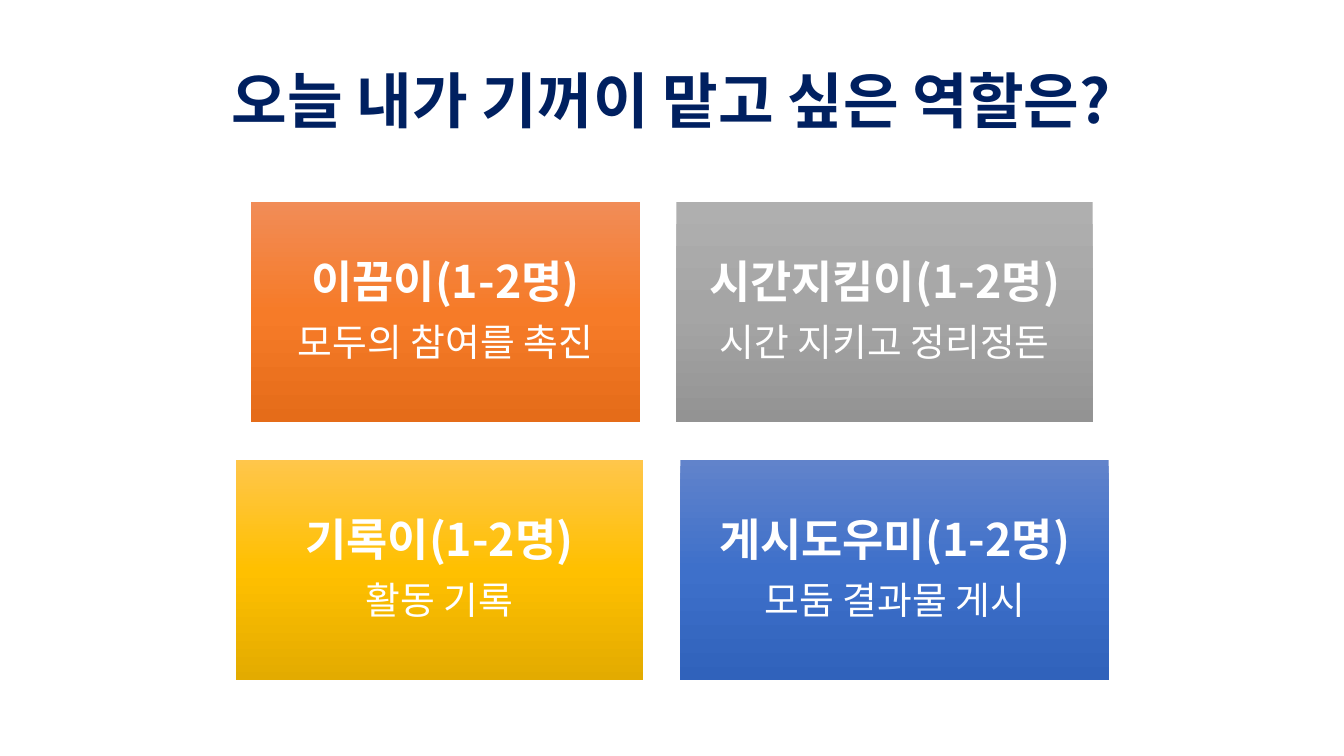
"""Build a slide that offers four group roles as gradient cards."""
from copy import deepcopy

from lxml import etree
from pptx import Presentation
from pptx.dml.color import RGBColor
from pptx.enum.shapes import MSO_SHAPE
from pptx.enum.text import MSO_ANCHOR, PP_ALIGN
from pptx.oxml.ns import qn
from pptx.util import Pt

RECTANGLE = MSO_SHAPE.RECTANGLE
MIDDLE = MSO_ANCHOR.MIDDLE
CENTER = PP_ALIGN.CENTER

FONT = "Noto Sans CJK KR"
NAVY = RGBColor(0x00, 0x20, 0x60)
WHITE = RGBColor(0xFF, 0xFF, 0xFF)
ORANGES = (RGBColor(0xF1, 0x8C, 0x57), RGBColor(0xF6, 0x7B, 0x28), RGBColor(0xE5, 0x6C, 0x19))
GRAYS = (RGBColor(0xAF, 0xAF, 0xAF), RGBColor(0xA5, 0xA5, 0xA5), RGBColor(0x93, 0x93, 0x93))
GOLDS = (RGBColor(0xFF, 0xC6, 0x4B), RGBColor(0xFF, 0xC0, 0x00), RGBColor(0xE3, 0xAB, 0x00))
BLUES = (RGBColor(0x61, 0x83, 0xCB), RGBColor(0x3E, 0x70, 0xCA), RGBColor(0x30, 0x62, 0xBB))

TITLE_FORMAT = {"size": Pt(43.2), "bold": True, "name": FONT}
ROLE_FORMAT = {"size": Pt(32), "bold": True, "name": FONT}
DUTY_FORMAT = {"size": Pt(27), "bold": False, "name": FONT}
CARD_FRAME = {
    "word_wrap": True,
    "vertical_anchor": MIDDLE,
    "margin_left": Pt(9.6),
    "margin_top": Pt(9.6),
    "margin_right": Pt(9.6),
    "margin_bottom": Pt(9.6),
}
TITLE_FRAME = {"word_wrap": True, "vertical_anchor": MIDDLE}
PARAGRAPH_FORMAT = {"alignment": CENTER, "line_spacing": 0.9}

CARD_HEIGHT = 157.7
ROW_TOPS = (144, 328.3)
CARD_ROWS = (
    (
        (179.3, 277.9, ORANGES, "이끔이(1-2명)", "모두의 참여를 촉진"),
        (483.1, 297.4, GRAYS, "시간지킴이(1-2명)", "시간 지키고 정리정돈"),
    ),
    (
        (168.5, 290.9, GOLDS, "기록이(1-2명)", "활동 기록"),
        (486, 306, BLUES, "게시도우미(1-2명)", "모둠 결과물 게시"),
    ),
)


def apply_format(target, values):
    """Set each attribute named in values on target."""
    for name, value in values.items():
        setattr(target, name, value)


def write_paragraph(para, text, font_format, color):
    """Write one centred line with matching Latin and East Asian fonts."""
    apply_format(para, PARAGRAPH_FORMAT)
    span = para.add_run()
    span.text = text
    apply_format(span.font, font_format)
    span.font.color.rgb = color
    etree.SubElement(span.font._element, qn("a:ea"), typeface=FONT)


def add_relative_space_after(para, percent):
    """Put space after a paragraph as a percentage of its line."""
    space = etree.SubElement(para._p.get_or_add_pPr(), qn("a:spcAft"))
    etree.SubElement(space, qn("a:spcPct"), val=str(percent * 1000))


def fill_downward(shape, colors):
    """Fill a shape with a top to bottom gradient of three colours."""
    shape.fill.gradient()
    shape.fill.gradient_angle = 270
    last_stop = shape._element.spPr.findall(".//" + qn("a:gs"))[-1]
    last_stop.addnext(deepcopy(last_stop))
    for index, (stop, color) in enumerate(zip(shape.fill.gradient_stops, colors)):
        stop.color.rgb = color
        stop.position = index / 2


def add_title(page, text):
    """Add the slide heading."""
    box = page.shapes.add_textbox(Pt(108), Pt(22.3), Pt(743), Pt(104.4))
    apply_format(box.text_frame, TITLE_FRAME)
    write_paragraph(box.text_frame.paragraphs[0], text, TITLE_FORMAT, NAVY)


def add_card(page, top, left, width, colors, role, duty):
    """Add a gradient card with a role name and its duty."""
    card = page.shapes.add_shape(RECTANGLE, Pt(left), Pt(top), Pt(width), Pt(CARD_HEIGHT))
    card.shadow.inherit = False
    card.line.fill.background()
    fill_downward(card, colors)
    frame = card.text_frame
    apply_format(frame, CARD_FRAME)
    lines = (
        (frame.paragraphs[0], role, ROLE_FORMAT),
        (frame.add_paragraph(), duty, DUTY_FORMAT),
    )
    for para, text, font_format in lines:
        write_paragraph(para, text, font_format, WHITE)
        add_relative_space_after(para, 35)


def main():
    """Create the deck and save it."""
    deck = Presentation()
    deck.slide_width, deck.slide_height = Pt(960), Pt(540)
    page = deck.slides.add_slide(deck.slide_layouts[6])
    add_title(page, "오늘 내가 기꺼이 맡고 싶은 역할은?")
    for top, cards in zip(ROW_TOPS, CARD_ROWS):
        for card in cards:
            add_card(page, top, *card)
    deck.save("out.pptx")


if __name__ == "__main__":
    main()
